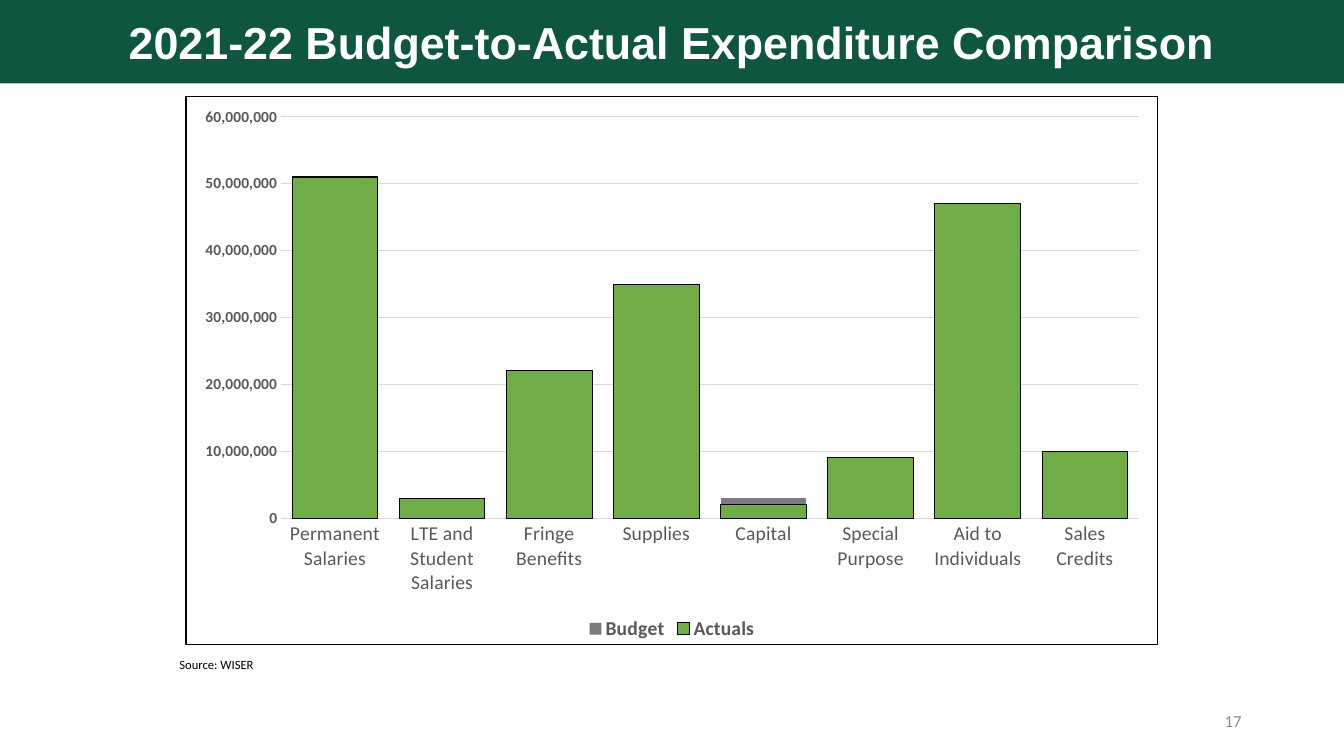
from copy import deepcopy
from dataclasses import dataclass

from lxml.etree import fromstring
from pptx import Presentation
from pptx.chart.data import CategoryChartData
from pptx.dml.color import RGBColor
from pptx.enum.chart import XL_CHART_TYPE, XL_LEGEND_POSITION, XL_TICK_MARK
from pptx.enum.shapes import MSO_SHAPE
from pptx.enum.text import MSO_ANCHOR, MSO_AUTO_SIZE, PP_ALIGN
from pptx.oxml.ns import qn
from pptx.util import Pt


@dataclass(frozen=True)
class Theme:
    """Colours, fonts and type sizes of the slide."""
    banner: str = "0F5640"
    white: str = "FFFFFF"
    black: str = "000000"
    label: str = "595959"
    grid: str = "D9D9D9"
    page: str = "8C8C8C"
    budget: str = "7C7C7C"
    actuals: str = "70AD47"
    heading: str = "Arial"
    body: str = "Calibri"
    title_size: float = 32
    category_size: float = 14
    value_size: float = 11
    chart_size: float = 10
    source_size: float = 9
    page_size: float = 12
    hairline: float = 0.75


class SlideBuilder:
    """Adds styled elements to the current slide."""

    def __init__(self, slide, theme):
        self.slide = slide
        self.theme = theme

    def style_font(self, font, size, color, bold=False, face=None):
        """Set face, size, colour and weight of a font."""
        font.name = face or self.theme.body
        font.size = Pt(size)
        font.bold = bold
        font.color.rgb = RGBColor.from_string(color)

    def style_line(self, line, color):
        """Give a line the hairline width and a colour."""
        line.color.rgb = RGBColor.from_string(color)
        line.width = Pt(self.theme.hairline)

    def add_wording(self, frame, wording, size, color, align, bold=False, face=None):
        """Put one run into a text frame."""
        frame.word_wrap = True
        paragraph = frame.paragraphs[0]
        paragraph.alignment = align
        run = paragraph.add_run()
        run.text = wording
        self.style_font(run.font, size, color, bold, face)

    def banner(self, wording, left, top, width, height):
        """Add the filled title band."""
        theme = self.theme
        band = self.slide.shapes.add_shape(
            MSO_SHAPE.RECTANGLE, Pt(left), Pt(top), Pt(width), Pt(height))
        band.shadow.inherit = False
        band.fill.solid()
        band.fill.fore_color.rgb = RGBColor.from_string(theme.banner)
        band.line.fill.background()
        band.text_frame.vertical_anchor = MSO_ANCHOR.MIDDLE
        self.add_wording(band.text_frame, wording, theme.title_size, theme.white,
                         PP_ALIGN.CENTER, True, theme.heading)

    def text(self, wording, left, top, width, height, size, color,
             align=PP_ALIGN.LEFT, anchor=MSO_ANCHOR.TOP, grow=False):
        """Add a one-line text box."""
        frame = self.slide.shapes.add_textbox(
            Pt(left), Pt(top), Pt(width), Pt(height)).text_frame
        frame.vertical_anchor = anchor
        self.add_wording(frame, wording, size, color, align)
        if grow:
            frame.auto_size = MSO_AUTO_SIZE.SHAPE_TO_FIT_TEXT

    def comparison_chart(self, categories, budget, actuals, left, top, width, height):
        """Add a column chart with actuals in front of budget."""
        theme = self.theme
        figures = CategoryChartData(number_format="#,##0")
        figures.categories = categories
        figures.add_series("Budget", budget)
        figures.add_series("Actuals", actuals)
        chart = self.slide.shapes.add_chart(
            XL_CHART_TYPE.COLUMN_CLUSTERED, Pt(left), Pt(top), Pt(width),
            Pt(height), figures).chart
        chart.has_title = False
        self.style_font(chart.font, theme.chart_size, theme.black)

        chart.has_legend = True
        chart.legend.position = XL_LEGEND_POSITION.BOTTOM
        chart.legend.include_in_layout = False
        self.style_font(chart.legend.font, theme.category_size, theme.label, True)

        plot = chart.plots[0]
        plot.vary_by_categories = False
        plot.gap_width = 25
        plot.overlap = 100
        for series, color in zip(plot.series, (theme.budget, theme.actuals)):
            series.format.fill.solid()
            series.format.fill.fore_color.rgb = RGBColor.from_string(color)
        self.style_line(plot.series[1].format.line, theme.black)

        for axis in (chart.category_axis, chart.value_axis):
            axis.major_tick_mark = axis.minor_tick_mark = XL_TICK_MARK.NONE
        self.style_font(chart.category_axis.tick_labels.font,
                        theme.category_size, theme.label)
        self.style_line(chart.category_axis.format.line, theme.grid)
        amounts = chart.value_axis
        amounts.minimum_scale, amounts.maximum_scale = 0, 60_000_000
        amounts.major_unit = 10_000_000
        amounts.tick_labels.number_format = "#,##0"
        amounts.tick_labels.number_format_is_linked = False
        self.style_font(amounts.tick_labels.font, theme.value_size, theme.label, True)
        amounts.format.line.fill.background()
        amounts.has_major_gridlines = True
        self.style_line(amounts.major_gridlines.format.line, theme.grid)

        self.move_to_second_axis(chart)
        self.frame_chart(chart)

    def move_to_second_axis(self, chart):
        """Put the last series on a hidden right-hand axis."""
        area = chart.plots[0].series[0]._element.getparent().getparent()
        front_columns = area.find(qn("c:barChart"))
        second_columns = deepcopy(front_columns)
        front_columns.remove(front_columns.findall(qn("c:ser"))[1])
        second_columns.remove(second_columns.findall(qn("c:ser"))[0])
        front_columns.addnext(second_columns)

        category_axis, value_axis = area.find(qn("c:catAx")), area.find(qn("c:valAx"))
        second_ids = {category_axis.find(qn("c:axId")).get("val"): "50010",
                      value_axis.find(qn("c:axId")).get("val"): "50020"}
        second_category, second_value = deepcopy(category_axis), deepcopy(value_axis)
        second_value.remove(second_value.find(qn("c:majorGridlines")))
        second_value.find(qn("c:axPos")).set("val", "r")
        second_value.find(qn("c:crosses")).set("val", "max")
        value_axis.addnext(second_value)
        second_value.addnext(second_category)
        for part in (second_columns, second_category, second_value):
            for tag in ("c:axId", "c:crossAx"):
                for reference in part.findall(qn(tag)):
                    reference.set("val", second_ids[reference.get("val")])
        for axis in (second_category, second_value):
            axis.find(qn("c:delete")).set("val", "1")

    def frame_chart(self, chart):
        """Draw the border around the whole chart."""
        theme = self.theme
        border = fromstring(
            '<c:spPr xmlns:c="http://schemas.openxmlformats.org/drawingml/2006/chart" '
            'xmlns:a="http://schemas.openxmlformats.org/drawingml/2006/main">'
            f'<a:noFill/><a:ln w="{Pt(theme.hairline)}"><a:solidFill>'
            f'<a:srgbClr val="{theme.black}"/></a:solidFill></a:ln></c:spPr>')
        chart._chartSpace.find(qn("c:chart")).addnext(border)


def main():
    """Build and save the expenditure slide."""
    deck = Presentation()
    deck.slide_width, deck.slide_height = Pt(960), Pt(540)
    theme = Theme()
    builder = SlideBuilder(deck.slides.add_slide(deck.slide_layouts[6]), theme)

    millions = {
        "Permanent Salaries": (48, 51),
        "LTE and Student Salaries": (3, 3),
        "Fringe Benefits": (22, 22),
        "Supplies": (35, 35),
        "Capital": (3, 2),
        "Special Purpose": (7, 9),
        "Aid to Individuals": (43, 47),
        "Sales Credits": (2, 10),
    }
    budget, actuals = ([amount * 1_000_000 for amount in column]
                       for column in zip(*millions.values()))
    builder.comparison_chart(list(millions), budget, actuals, 132.5, 68.5, 695, 392.5)
    builder.text("Source: WISER", 121, 466, 214, 18,
                 theme.source_size, theme.black, grow=True)
    builder.banner("2021-22 Budget-to-Actual Expenditure Comparison", 0, -0.5, 960, 60)
    builder.text("17", 678, 500.5, 216, 29, theme.page_size, theme.page,
                 PP_ALIGN.RIGHT, MSO_ANCHOR.MIDDLE)
    deck.save("out.pptx")


if __name__ == "__main__":
    main()
